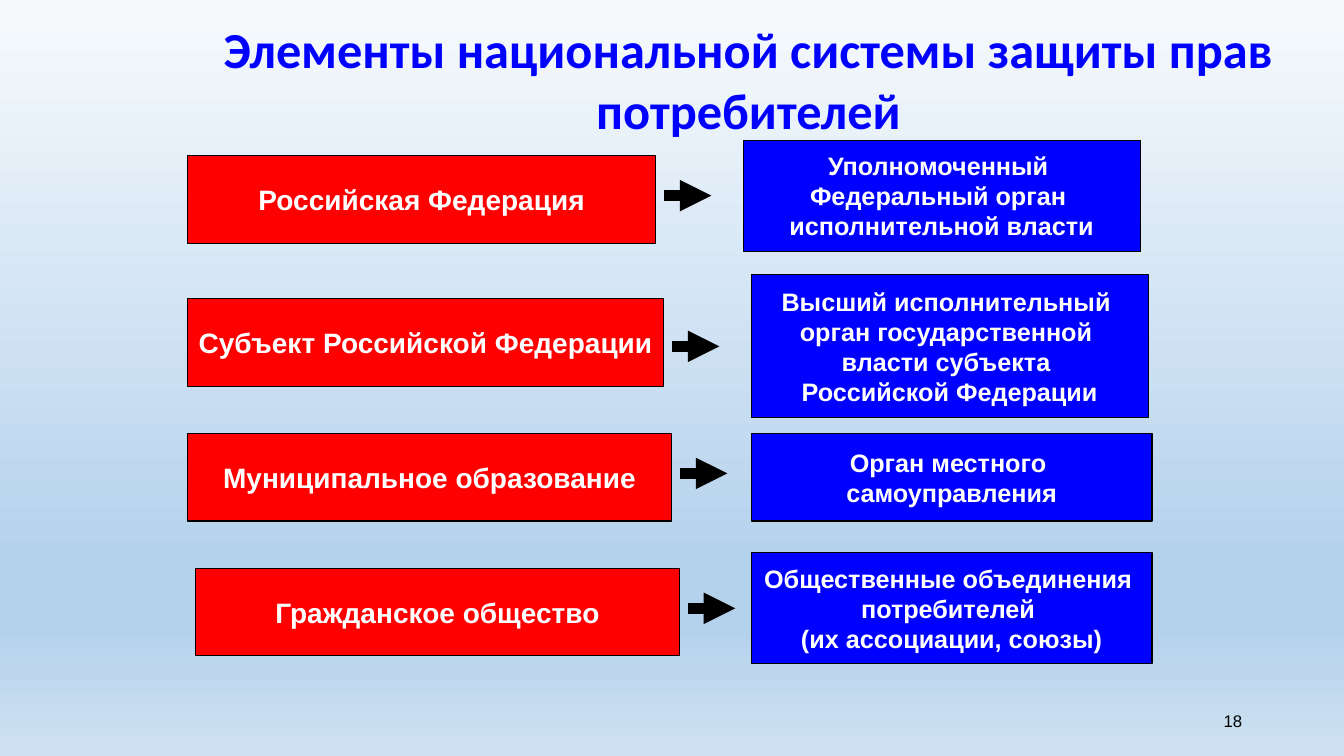
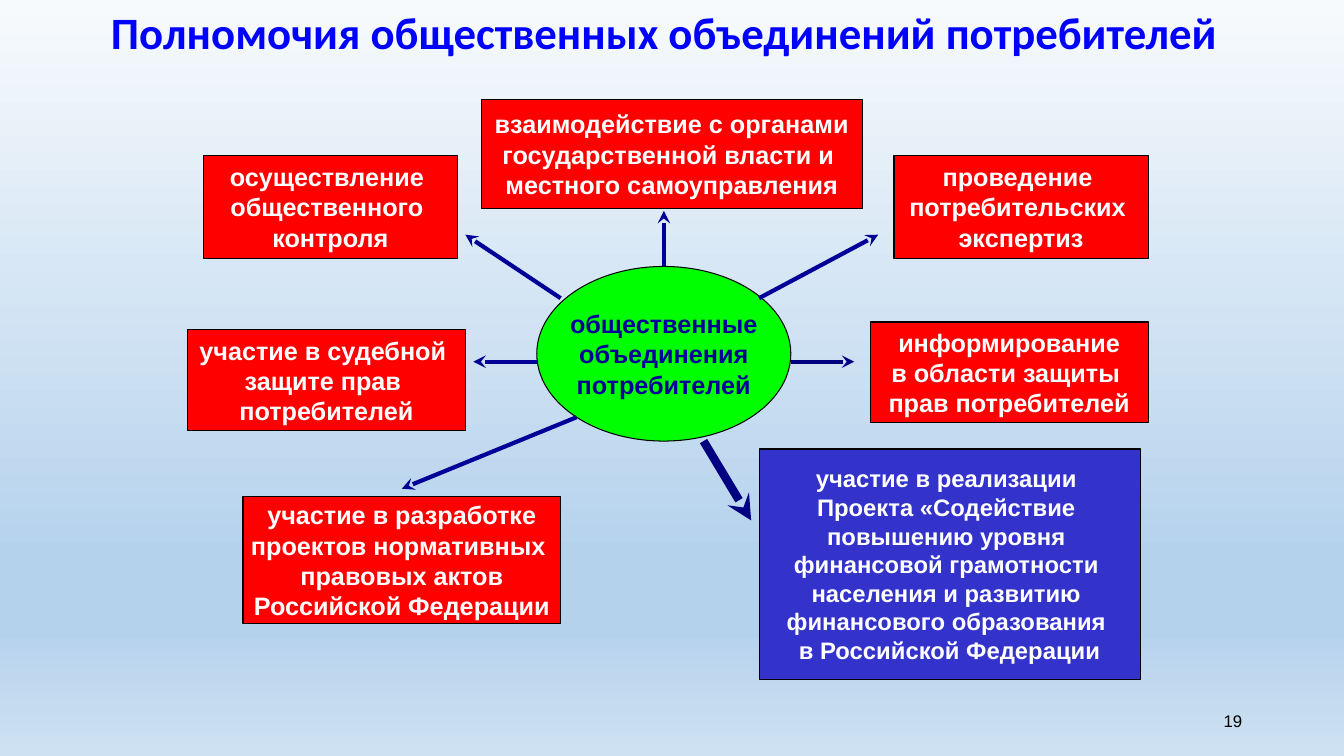
from copy import deepcopy
from lxml.etree import SubElement as Sub
from pptx import Presentation
from pptx.dml.color import RGBColor as Rgb
from pptx.enum.shapes import MSO_CONNECTOR as Link, MSO_SHAPE as Kind
from pptx.enum.text import MSO_ANCHOR as Anchor, MSO_AUTO_SIZE as Auto, PP_ALIGN as Align
from pptx.oxml.ns import qn
from pptx.util import Inches, Mm, Pt

WIDE, HIGH = Inches(13.33), Inches(7.5)
CELL = Mm(2)
RED, BLUE, LILAC, GREEN = "FF0000", "0000FF", "3333CC", "00FF00"
BLACK, WHITE, NAVY, DARK = "000000", "FFFFFF", "000099", "000080"
SKY = [(0, "F7FAFD"), (0.74, "B5D2EC"), (0.83, "B5D2EC"), (1, "CEE1F2")]

LEVELS = [
    ((0, 2, 59, 11), "Российская Федерация",
     (70, 0, 50, 14), "Уполномоченный |Федеральный орган |исполнительной власти", 7),
    ((0, 20, 60, 11), "Субъект Российской Федерации",
     (71, 17, 50, 18), "Высший исполнительный |орган государственной |власти субъекта |Российской Федерации", 26),
    ((0, 37, 61, 11), "Муниципальное образование",
     (71, 37, 50.5, 11), "Орган местного |самоуправления", 42),
    ((1, 54, 61, 11), "Гражданское общество",
     (71, 52, 50.5, 14), "Общественные объединения |потребителей |(их ассоциации, союзы)", 59),
]

POWERS = [
    ((7, 50, 40, 16), "участие в разработке|проектов нормативных |правовых актов|Российской Федерации"),
    ((89, 7, 32, 13), "проведение |потребительских |экспертиз"),
    ((37, 0, 48, 13.7), "взаимодействие с органами|государственной власти и |местного самоуправления"),
    ((2, 7, 32, 13), "осуществление |общественного |контроля"),
    ((86, 28, 35, 12.7), "информирование|в области защиты |прав потребителей"),
    ((0, 29, 35, 12.7), "участие в судебной |защите прав |потребителей"),
]

PROJECT = ("участие в реализации |Проекта «Содействие |повышению уровня |финансовой грамотности |"
           "населения и развитию |финансового образования |в Российской Федерации")

RAYS = [
    ((49, 40), (27, 49), NAVY, 3),
    ((44, 33), (36, 33), NAVY, 3),
    ((76, 33), (84, 33), DARK, 3),
    ((47, 25), (35, 17), NAVY, 3),
    ((72, 25), (87, 17), NAVY, 3),
    ((60, 21), (60, 14), NAVY, 3),
    ((65, 43), (71, 53), DARK, 6),
]


def tint(code):
    """Turn a hex string into a colour."""
    return Rgb.from_string(code)


def share(left, top, width=0, height=0):
    """Turn percentages of the slide into a box."""
    return [round(part * whole / 100) for part, whole in
            ((left, WIDE), (top, HIGH), (width, WIDE), (height, HIGH))]


def place(shape, box):
    """Move a shape to a box."""
    shape.left, shape.top, shape.width, shape.height = box


def write(frame, text, size, color, align=Align.CENTER, face="Arial", bold=True):
    """Write each line as a paragraph with one run."""
    for row, line in enumerate(text.split("|")):
        para = frame.add_paragraph() if row else frame.paragraphs[0]
        para.alignment = align
        run = para.add_run()
        run.text = line
        font = run.font
        font.name, font.size, font.bold = face, Pt(size), bold
        font.color.rgb = tint(color)


def block(slide, start, spot, text, fill, size=18, color=WHITE, kind=Kind.RECTANGLE):
    """Draw a filled shape with text on the grid that begins at start."""
    col, row, cols, rows = [round(n * CELL) for n in spot]
    shape = slide.shapes.add_shape(kind, start[0] + col, start[1] + row, cols, rows)
    shape.shadow.inherit = False
    shape.fill.solid()
    shape.fill.fore_color.rgb = tint(fill)
    shape.line.color.rgb = tint(BLACK)
    shape.line.width = Pt(0.75)
    frame = shape.text_frame
    frame.word_wrap = False
    frame.vertical_anchor = Anchor.MIDDLE
    write(frame, text, size, color)


def arrow(slide, start, tail, tip, color, width, head):
    """Draw an arrow on the grid that begins at start."""
    ends = [start[axis] + round(spot[axis] * CELL) for spot in (tail, tip) for axis in (0, 1)]
    line = slide.shapes.add_connector(Link.STRAIGHT, *ends)
    line.line.color.rgb = tint(color)
    line.line.width = Pt(width)
    props = line.element.spPr
    Sub(props.find(qn("a:ln")), qn("a:tailEnd"), type=head)
    Sub(props, qn("a:effectLst"))


def page(deck, title, box, size, align, number):
    """Add a slide with its title and number."""
    slide = deck.slides.add_slide(deck.slide_layouts[5])
    head = slide.shapes.title
    place(head, box)
    frame = head.text_frame
    frame.word_wrap, frame.auto_size = True, Auto.NONE
    frame.vertical_anchor = Anchor.TOP
    write(frame, title, size, BLUE, align, "Calibri")
    foot = slide.shapes.add_textbox(*share(70.67, 92.67, 22.5, 5.33)).text_frame
    foot.word_wrap = True
    foot.vertical_anchor = Anchor.MIDDLE
    write(foot, str(number), 12, BLACK, Align.RIGHT, bold=False)
    return slide


def ladder(slide, start):
    """Draw the levels and the bodies they lead to."""
    for left, level, right, body, row in LEVELS:
        block(slide, start, left, level, RED, 20)
        block(slide, start, right, body, BLUE)
        edge = left[0] + left[2] + 1
        arrow(slide, start, (edge, row), (edge + 6, row), BLACK, 7.5, "triangle")


def wheel(slide, start):
    """Draw the hub, its powers and the rays between them."""
    block(slide, start, (44, 21, 32, 22), "общественные|объединения|потребителей",
          GREEN, color=NAVY, kind=Kind.OVAL)
    for spot, text in POWERS:
        block(slide, start, spot, text, RED)
    block(slide, start, (72, 44, 48, 29), PROJECT, LILAC, 17)
    for ray in RAYS:
        arrow(slide, start, *ray, "stealth")


def paint(master):
    """Give the master its sky gradient."""
    fill = master.background.fill
    fill.gradient()
    fill.gradient_angle = 270
    stops = next(master.element.iter(qn("a:gsLst")))
    for stop in list(stops):
        stops.append(deepcopy(stop))
    for stop, (spot, code) in zip(fill.gradient_stops, SKY):
        stop.position = spot
        stop.color.rgb = tint(code)


def main():
    """Build and save the deck."""
    deck = Presentation()
    deck.slide_width, deck.slide_height = WIDE, HIGH
    paint(deck.slide_master)
    first = page(deck, "Элементы национальной системы защиты прав потребителей",
                 share(14.85, 1.73, 81.7, 17.47), 36, Align.CENTER, 18)
    ladder(first, share(13.95, 18.53))
    second = page(deck, "Полномочия общественных объединений потребителей",
                  share(7.5, 0, 92.5, 8.53), 32, Align.LEFT, 19)
    wheel(second, share(13.95, 13.2))
    deck.save("out.pptx")


if __name__ == "__main__":
    main()
